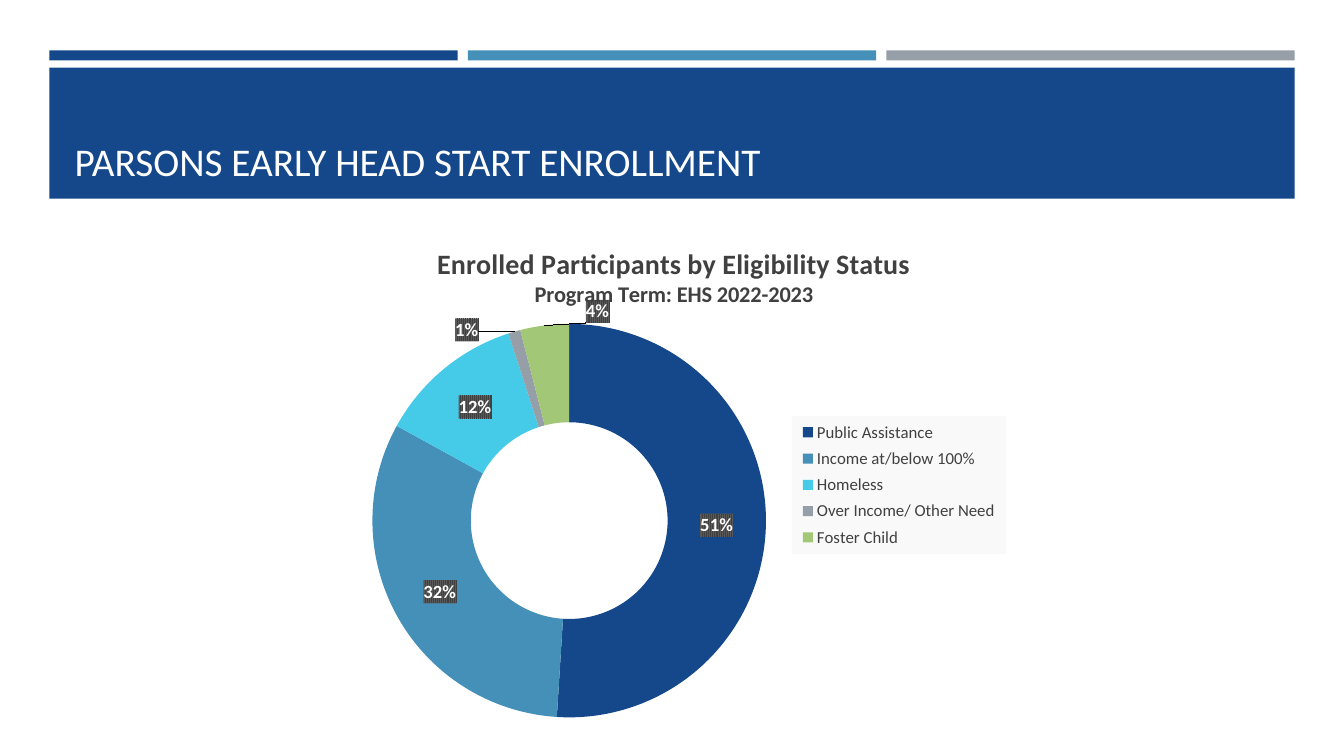
from dataclasses import dataclass

from lxml import etree
from pptx import Presentation
from pptx import util as u
from pptx.chart.data import CategoryChartData
from pptx.dml.color import RGBColor
from pptx.enum import chart as charts, shapes, text
from pptx.oxml import parse_xml
from pptx.oxml.ns import nsdecls, qn


@dataclass(frozen=True)
class Theme:
    font: str = "Calibri"
    navy: str = "15488A"
    blue: str = "4590B8"
    cyan: str = "45CBE8"
    gray: str = "969FA7"
    green: str = "A2C777"
    white: str = "FFFFFF"
    ink: str = "404040"
    label_stripe: str = "595959"
    legend_fill: str = "F9F9F9"
    title_size: float = 28
    heading_size: float = 20
    subheading_size: float = 16
    label_size: float = 13.3
    legend_size: float = 12


THEME = Theme()
WIDTH, HEIGHT = 13.33, 7.5

# Three columns across the header, in inches
MARGIN, COLUMN, GUTTER = 0.49, 4.05, 0.1

ENROLLMENT = [
    ("Public Assistance", 51, THEME.navy),
    ("Income at/below 100%", 32, THEME.blue),
    ("Homeless", 12, THEME.cyan),
    ("Over Income/ Other Need", 1, THEME.gray),
    ("Foster Child", 4, THEME.green),
]
# Label shifts of the thin slices, as shares of the chart
LABEL_SHIFTS = {3: (-0.077, -0.096), 4: (0.059, -0.123)}


def style_font(font, size, color, bold=False):
    font.name = THEME.font
    font.size = u.Pt(size)
    font.bold = bold
    font.color.rgb = RGBColor.from_string(color)


def add_block(page, left, top, width, height, color):
    block = page.shapes.add_shape(
        shapes.MSO_SHAPE.RECTANGLE,
        *(u.Inches(length) for length in (left, top, width, height)))
    block.shadow.inherit = False
    block.fill.solid()
    block.fill.fore_color.rgb = RGBColor.from_string(color)
    block.line.fill.background()


def add_header(page):
    # Accent bars, one per column
    for column, color in enumerate((THEME.navy, THEME.blue, THEME.gray)):
        add_block(page, MARGIN + column * (COLUMN + GUTTER), 0.5,
                  COLUMN, 0.1, color)
    add_block(page, MARGIN, 0.67, 3 * COLUMN + 2 * GUTTER, 1.3, THEME.navy)


def set_title(page, words):
    title = page.shapes.title
    title.left, title.top = u.Inches(0.64), u.Inches(0.77)
    title.width, title.height = u.Inches(12.06), u.Inches(1.11)
    frame = title.text_frame
    frame.word_wrap = True
    frame.auto_size = text.MSO_AUTO_SIZE.NONE
    frame.vertical_anchor = text.MSO_ANCHOR.BOTTOM
    para = frame.paragraphs[0]
    para.alignment = text.PP_ALIGN.LEFT
    span = para.add_run()
    span.text = words
    style_font(span.font, THEME.title_size, THEME.white)
    # Bring the title in front of its band
    title.element.getparent().append(title.element)


def place(part, index, inner=False, **shares):
    """Give a chart part a manual layout in shares of the chart."""
    for old in part.findall(qn("c:layout")):
        part.remove(old)
    layout = etree.Element(qn("c:layout"))
    manual = etree.SubElement(layout, qn("c:manualLayout"))
    if inner:
        etree.SubElement(manual, qn("c:layoutTarget"), val="inner")
    if "w" in shares or part.tag == qn("c:title"):
        for mode in ("xMode", "yMode"):
            etree.SubElement(manual, qn(f"c:{mode}"), val="edge")
    for name, share in shares.items():
        etree.SubElement(manual, qn(f"c:{name}"), val=str(share))
    part.insert(index, layout)


def style_label(font, label):
    """White bold text on a striped dark patch."""
    style_font(font, THEME.label_size, THEME.white, bold=True)
    patch = parse_xml(
        f'<c:spPr {nsdecls("c", "a")}><a:pattFill prst="narVert">'
        f'<a:fgClr><a:srgbClr val="{THEME.ink}"/></a:fgClr>'
        f'<a:bgClr><a:srgbClr val="{THEME.label_stripe}"/></a:bgClr>'
        '</a:pattFill><a:ln><a:noFill/></a:ln></c:spPr>')
    label.find(qn("c:txPr")).addprevious(patch)


def add_labels(series):
    labels = series.data_labels
    labels.number_format = "0%"
    labels.number_format_is_linked = False
    labels.show_percentage = True
    labels.show_value = False
    group = series._element.find(qn("c:dLbls"))
    style_label(labels.font, group)
    leader = group.find(qn("c:showLeaderLines"))
    if leader is None:
        leader = etree.SubElement(group, qn("c:showLeaderLines"))
    leader.set("val", "1")

    # Thin slices carry their labels outside the ring
    for number, (x, y) in LABEL_SHIFTS.items():
        font = series.points[number].data_label.font
        label = next(item for item in group.findall(qn("c:dLbl"))
                     if item.find(qn("c:idx")).get("val") == str(number))
        style_label(font, label)
        place(label, 1, x=x, y=y)
        label.find(qn("c:showVal")).set("val", "0")
        label.find(qn("c:showPercent")).set("val", "1")


def add_chart_title(chart):
    frame = chart.chart_title.text_frame
    lines = (("Enrolled Participants by Eligibility Status", THEME.heading_size),
             ("Program Term: EHS 2022-2023", THEME.subheading_size))
    for number, (words, size) in enumerate(lines):
        para = frame.add_paragraph() if number else frame.paragraphs[0]
        span = para.add_run()
        span.text = words
        style_font(span.font, size, THEME.ink, bold=True)
    place(chart.chart_title._element, 1, x=0.2, y=0.04)


def add_legend(chart):
    chart.has_legend = True
    legend = chart.legend
    legend.position = charts.XL_LEGEND_POSITION.RIGHT
    legend.include_in_layout = False
    style_font(legend.font, THEME.legend_size, THEME.ink)
    place(legend._element, 1, x=0.65, y=0.38, w=0.27, h=0.27)
    legend._element.find(qn("c:txPr")).addprevious(parse_xml(
        f'<c:spPr {nsdecls("c", "a")}><a:solidFill>'
        f'<a:srgbClr val="{THEME.legend_fill}"/></a:solidFill></c:spPr>'))


def add_doughnut(page):
    data = CategoryChartData()
    data.categories = [name for name, _, _ in ENROLLMENT]
    data.add_series("Series 1", [value for _, value, _ in ENROLLMENT])
    chart = page.shapes.add_chart(
        charts.XL_CHART_TYPE.DOUGHNUT, u.Inches(2.73), u.Inches(2.2),
        u.Inches(7.88), u.Inches(5.07), data).chart
    style_font(chart.font, 10, "000000")
    plot = chart.plots[0]
    plot.vary_by_categories = True
    plot._element.find(qn("c:holeSize")).set("val", "50")
    place(plot._element.getparent(), 0, inner=True,
          x=0.12, y=0.2, w=0.5, h=0.77)

    # Slices
    series = plot.series[0]
    for number, (_, _, color) in enumerate(ENROLLMENT):
        slice_format = series.points[number].format
        slice_format.fill.solid()
        slice_format.fill.fore_color.rgb = RGBColor.from_string(color)
        slice_format.line.fill.background()
    add_labels(series)
    add_chart_title(chart)
    add_legend(chart)


def main():
    deck = Presentation()
    deck.slide_width, deck.slide_height = u.Inches(WIDTH), u.Inches(HEIGHT)
    page = deck.slides.add_slide(deck.slide_layouts.get_by_name("Title Only"))
    add_header(page)
    set_title(page, "PARSONS EARLY HEAD START ENROLLMENT")
    add_doughnut(page)
    deck.save("out.pptx")


if __name__ == "__main__":
    main()
